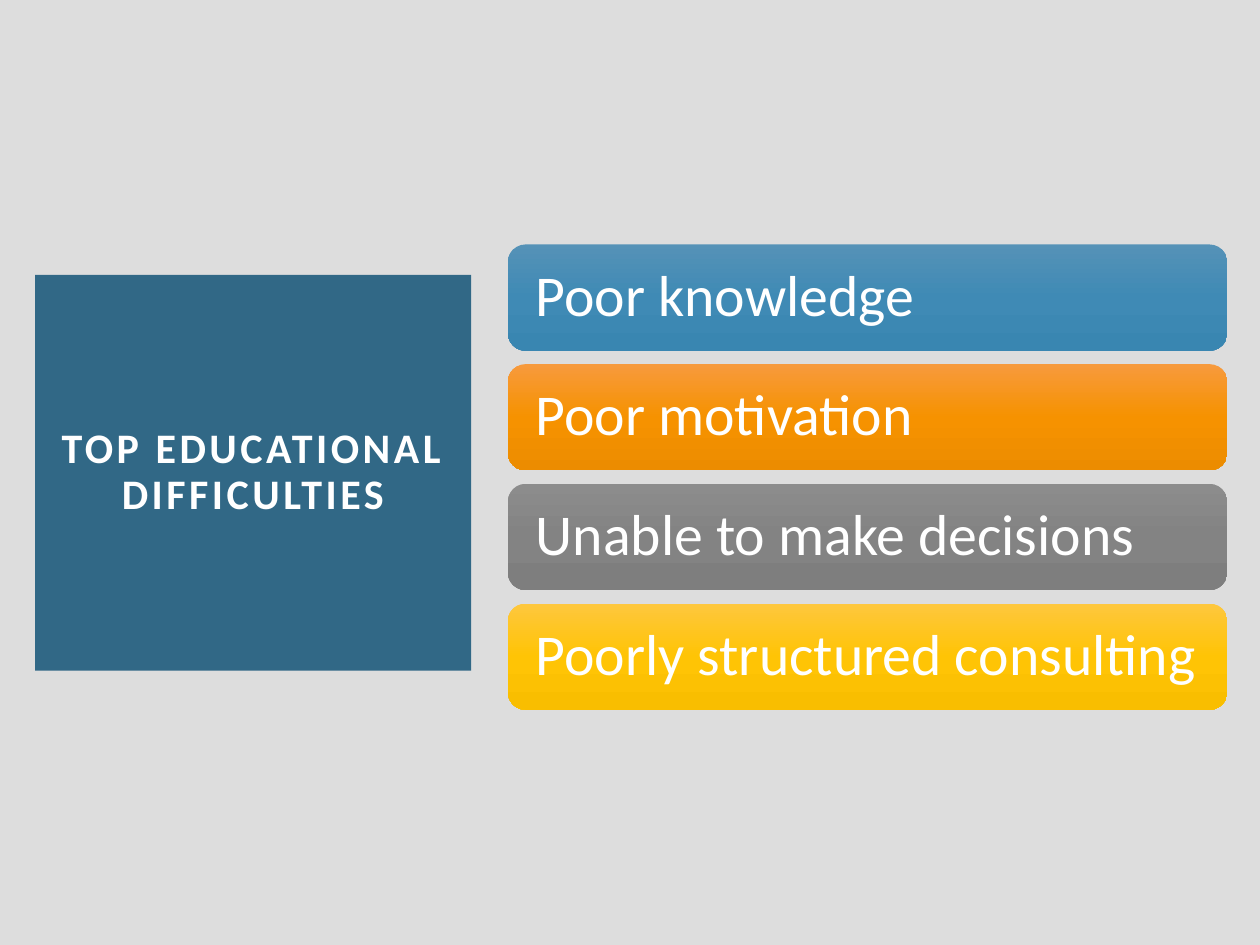
import copy

import pptx
import pptx.dml.color
import pptx.enum.shapes
import pptx.enum.text
import pptx.oxml.ns
import pptx.util

Pt = pptx.util.Pt
COLORS = {"background": "DDDDDD", "title": "316886", "text": "FFFFFF"}
# Each difficulty with its gradient from top over middle to bottom
DIFFICULTIES = [
    ("Poor knowledge", ("5592B7", "3F8AB5", "3986B1")),
    ("Poor motivation", ("F79A3D", "F69200", "EC8C00")),
    ("Unable to make decisions", ("8C8C8C", "838383", "7E7E7E")),
    ("Poorly structured consulting", ("FEC73E", "FFC405", "F9BE00")),
]
BAR_LEFT, BAR_TOP, BAR_WIDTH, BAR_HEIGHT, BAR_STEP = 290.2, 139.7, 411.1, 60.7, 68.4


def rgb(value):
    return pptx.dml.color.RGBColor.from_string(value)


def write_text(shape, text, size, inset, align):
    """Fill the shape with one white, vertically centred run."""
    frame = shape.text_frame
    frame.word_wrap = True
    frame.auto_size = pptx.enum.text.MSO_AUTO_SIZE.NONE
    frame.vertical_anchor = pptx.enum.text.MSO_ANCHOR.MIDDLE
    frame.margin_left = frame.margin_right = Pt(inset)
    frame.margin_top = frame.margin_bottom = Pt(inset)
    paragraph = frame.paragraphs[0]
    paragraph.alignment = align
    paragraph.line_spacing = 0.9
    paragraph.space_before = Pt(0)
    run = paragraph.add_run()
    run.text = text
    run.font.size = Pt(size)
    run.font.name = "Calibri"
    run.font.color.rgb = rgb(COLORS["text"])
    return run


deck = pptx.Presentation()
deck.slide_width, deck.slide_height = Pt(720), Pt(540)
slide = deck.slides.add_slide(deck.slide_layouts[5])
slide.background.fill.solid()
slide.background.fill.fore_color.rgb = rgb(COLORS["background"])

for row, (difficulty, gradient) in enumerate(DIFFICULTIES):
    bar = slide.shapes.add_shape(
        pptx.enum.shapes.MSO_SHAPE.ROUNDED_RECTANGLE,
        Pt(BAR_LEFT), Pt(BAR_TOP + row * BAR_STEP), Pt(BAR_WIDTH), Pt(BAR_HEIGHT))
    bar.shadow.inherit = False
    bar.line.fill.background()
    bar.fill.gradient()
    bar.fill.gradient_angle = 270
    first_stop = next(bar._element.spPr.iter(pptx.oxml.ns.qn("a:gs")))
    first_stop.addnext(copy.deepcopy(first_stop))
    for stop, position, color in zip(bar.fill.gradient_stops, (0, 0.5, 1), gradient):
        stop.position = position
        stop.color.rgb = rgb(color)
    write_text(bar, difficulty, 33, 13, pptx.enum.text.PP_ALIGN.LEFT)

title = slide.shapes.title
title.left, title.top, title.width, title.height = Pt(20), Pt(157), Pt(249.2), Pt(226.2)
title.fill.solid()
title.fill.fore_color.rgb = rgb(COLORS["title"])
heading = write_text(title, "TOP EDUCATIONAL DIFFICULTIES", 24, 14.4,
                     pptx.enum.text.PP_ALIGN.CENTER)
heading.font.bold = True
heading.font._element.set("spc", "200")

deck.save("out.pptx")
